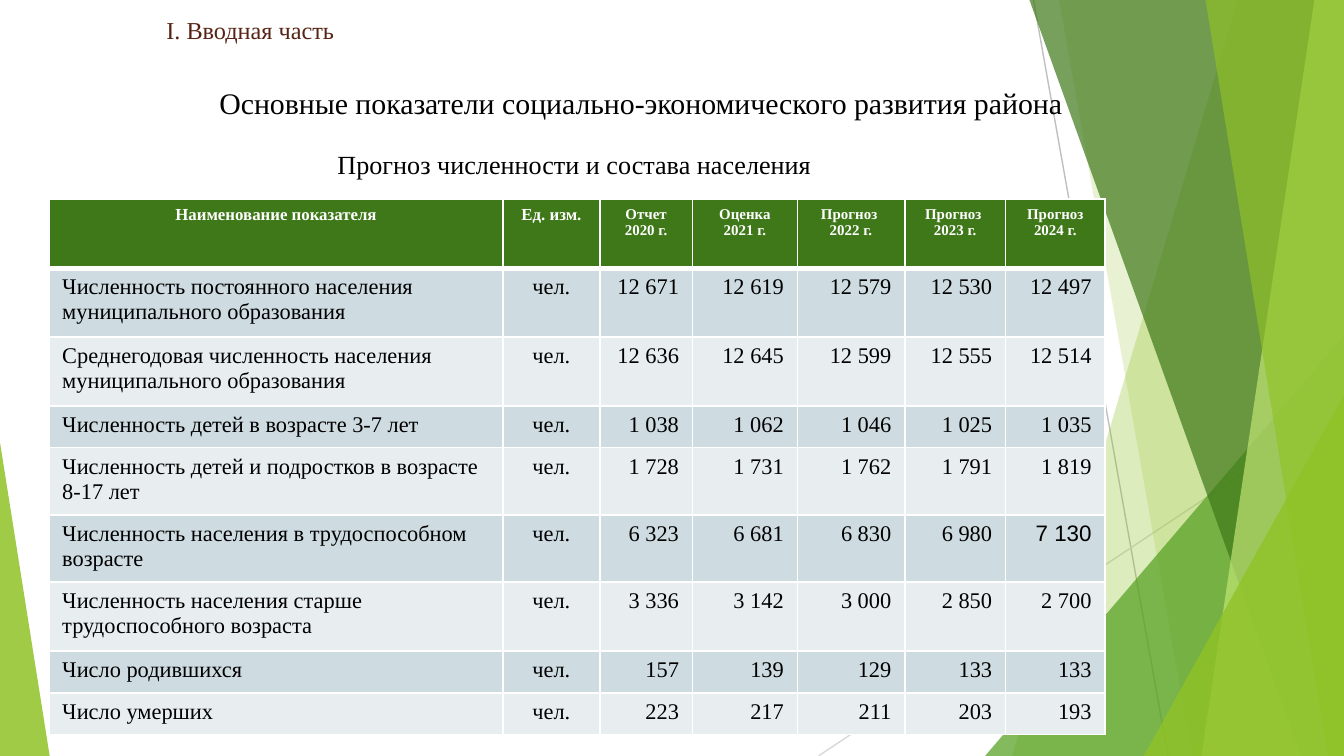
"""Build a slide with the population forecast table of a district."""
from lxml.etree import SubElement
from pptx import Presentation
from pptx.dml.color import RGBColor
from pptx.enum.shapes import MSO_CONNECTOR as Connector, MSO_SHAPE as Shape
from pptx.enum.text import MSO_ANCHOR as Anchor, PP_ALIGN as Align
from pptx.oxml.ns import qn
from pptx.util import Inches, Pt

SERIF = "Times New Roman"
COLUMNS, ROWS = 100, 56.25
LIME, GREEN, DARK, PALE = "90C226", "54A021", "3F7819", "C0E474"
WHITE, BLACK, BROWN = "FFFFFF", "000000", "572314"
BANDS = ("CEDBE1", "E8EEF0")

TABLE_COLUMNS = (33.8, 7.2, 6.9, 7.8, 8, 7.5, 7.4)
TABLE_ROWS = (5.13, 5.13, 5.13, 3.1, 4.6, 4.6, 5.13, 3.1, 3.1)
HEADINGS = (
    "Наименование показателя", "Ед. изм.", "Отчет 2020 г.", "Оценка\n2021 г.",
    "Прогноз \n2022 г.", "Прогноз \n2023 г.", "Прогноз 2024 г.",
)
UNIT = "чел."
INDICATORS = (
    ("Численность постоянного населения муниципального образования",
     "12 671", "12 619", "12 579", "12 530", "12 497"),
    ("Среднегодовая численность населения муниципального образования",
     "12 636", "12 645", "12 599", "12 555", "12 514"),
    ("Численность детей в возрасте 3-7 лет",
     "1 038", "1 062", "1 046", "1 025", "1 035"),
    ("Численность детей и подростков в возрасте 8-17 лет",
     "1 728", "1 731", "1 762", "1 791", "1 819"),
    ("Численность населения в трудоспособном возрасте",
     "6 323", "6 681", "6 830", "6 980", "7 130"),
    ("Численность населения старше трудоспособного возраста",
     "3 336", "3 142", "3 000", "2 850", "2 700"),
    ("Число родившихся", "157", "139", "129", "133", "133"),
    ("Число умерших", "223", "217", "211", "203", "193"),
)
ARIAL_VALUE = "7 130"


def grid(*counts):
    """Turn counts of grid columns or rows into lengths."""
    return [Inches(count / 10) for count in counts]


def paint(color_format, color):
    """Give a fill or line colour its hex value."""
    color_format.rgb = RGBColor.from_string(color)


def fill_glass(shape, color, opacity):
    """Fill a shape with a see-through colour and no outline."""
    shape.shadow.inherit = False
    shape.line.fill.background()
    shape.fill.solid()
    paint(shape.fill.fore_color, color)
    tone = shape._element.spPr.find(".//" + qn("a:srgbClr"))
    SubElement(tone, qn("a:alpha"), val=str(opacity * 1000))


def add_shard(page, top, bottom, color, opacity):
    """Add a full-height shard from a slanted edge to the right side."""
    start, *corners = [
        tuple(grid(*point))
        for point in ((top, 0), (COLUMNS, 0), (COLUMNS, ROWS), (bottom, ROWS))
    ]
    builder = page.shapes.build_freeform(*start)
    builder.add_line_segments(corners, close=True)
    fill_glass(builder.convert_to_shape(), color, opacity)


def add_corner(page, left, top, width, peak, color, opacity):
    """Add a triangle that stands on the bottom edge."""
    place = grid(left, top, width, ROWS - top)
    corner = page.shapes.add_shape(Shape.ISOSCELES_TRIANGLE, *place)
    corner.adjustments[0] = peak
    fill_glass(corner, color, opacity)


def add_ray(page, ends, color):
    """Add a thin straight line without shadow."""
    ray = page.shapes.add_connector(Connector.STRAIGHT, *grid(*ends))
    ray.line.width = Pt(0.75)
    paint(ray.line.color, color)
    SubElement(ray._element.spPr, qn("a:effectLst"))


def add_span(para, text, size, color, font=SERIF, bold=False):
    """Add one run of text to a paragraph."""
    span = para.add_run()
    span.text = text
    span.font.size, span.font.name, span.font.bold = Pt(size), font, bold
    paint(span.font.color, color)


def add_heading(page, place, text, size, color, align=Align.CENTER, anchor=Anchor.TOP):
    """Add a one-line heading and return its text frame."""
    frame = page.shapes.add_textbox(*grid(*place)).text_frame
    frame.word_wrap = True
    frame.vertical_anchor = anchor
    para = frame.paragraphs[0]
    para.alignment = align
    add_span(para, text, size, color)
    return frame


def add_borders(cell, top, bottom):
    """Draw white borders around a table cell."""
    props = cell._tc.get_or_add_tcPr()
    for side, width in (("L", 0.96), ("R", 0.96), ("T", top), ("B", bottom)):
        edge = SubElement(props, qn("a:ln" + side), w=str(Pt(width)))
        SubElement(SubElement(edge, qn("a:solidFill")), qn("a:srgbClr"), val=WHITE)


def fill_cell(cell, text, align, background, **style):
    """Write the lines of a cell and set its background."""
    cell.fill.solid()
    paint(cell.fill.fore_color, background)
    frame = cell.text_frame
    for index, line in enumerate(text.split("\n")):
        para = frame.add_paragraph() if index else frame.paragraphs[0]
        para.alignment = align
        add_span(para, line, **style)


def add_forecast(page):
    """Add the table with headings and banded indicator rows."""
    place = grid(3.63, 14.82, sum(TABLE_COLUMNS), sum(TABLE_ROWS))
    table = page.shapes.add_table(len(TABLE_ROWS), len(TABLE_COLUMNS), *place).table
    for column, width in zip(table.columns, grid(*TABLE_COLUMNS)):
        column.width = width
    for row, height in zip(table.rows, grid(*TABLE_ROWS)):
        row.height = height
    for index, text in enumerate(HEADINGS):
        cell = table.cell(0, index)
        add_borders(cell, 0.96, 3)
        fill_cell(cell, text, Align.CENTER, DARK,
                  size=9 if index < 2 else 8, color=WHITE, bold=True)
    aligns = [Align.LEFT, Align.CENTER] + [Align.RIGHT] * 5
    for number, (name, *values) in enumerate(INDICATORS, 1):
        for index, text in enumerate((name, UNIT, *values)):
            cell = table.cell(number, index)
            add_borders(cell, 3 if number == 1 else 0.96, 0.96)
            fill_cell(cell, text, aligns[index], BANDS[(number - 1) % 2],
                      size=12, color=BLACK,
                      font="Arial" if text == ARIAL_VALUE else SERIF)


def add_decor(page):
    """Add the green facets along the sides."""
    add_ray(page, (76.9, 0, 86.9, ROWS), "BFBFBF")
    add_ray(page, (COLUMNS, 30.2, 60.9, ROWS), "D9D9D9")
    add_shard(page, 92.1, 75.3, LIME, 30)
    add_shard(page, 78.8, 88.7, LIME, 20)
    add_corner(page, 73.3, 25, 26.7, 1, GREEN, 72)
    add_shard(page, 76.6, 96.8, DARK, 70)
    add_shard(page, 97.8, 89.4, PALE, 70)
    add_shard(page, 89.7, 98.8, LIME, 65)
    add_corner(page, 85.1, 29.4, 14.9, 1, LIME, 80)
    add_corner(page, 0, 32.9, 3.7, 0, LIME, 85)


def main():
    """Build and save the deck."""
    deck = Presentation()
    deck.slide_width, deck.slide_height = grid(COLUMNS, ROWS)
    page = deck.slides.add_slide(deck.slide_layouts[6])
    add_decor(page)
    add_heading(page, (11.4, 0, 83.6, 4.5), "I. Вводная часть", 13, BROWN,
                Align.LEFT, Anchor.MIDDLE)
    title = add_heading(page, (5.1, 3.1, 75.2, 6.9),
                        "Основные показатели социально-экономического развития района",
                        16, BLACK, anchor=Anchor.BOTTOM)
    title.margin_left, title.margin_right, title.margin_bottom = grid(10.5, 0.5, 1)
    add_forecast(page)
    subtitle = add_heading(page, (5.9, 10.8, 73.7, 3.2),
                           "Прогноз численности и состава населения", 14, BLACK)
    subtitle.paragraphs[0].line_spacing = 0.9
    deck.save("out.pptx")


if __name__ == "__main__":
    main()
